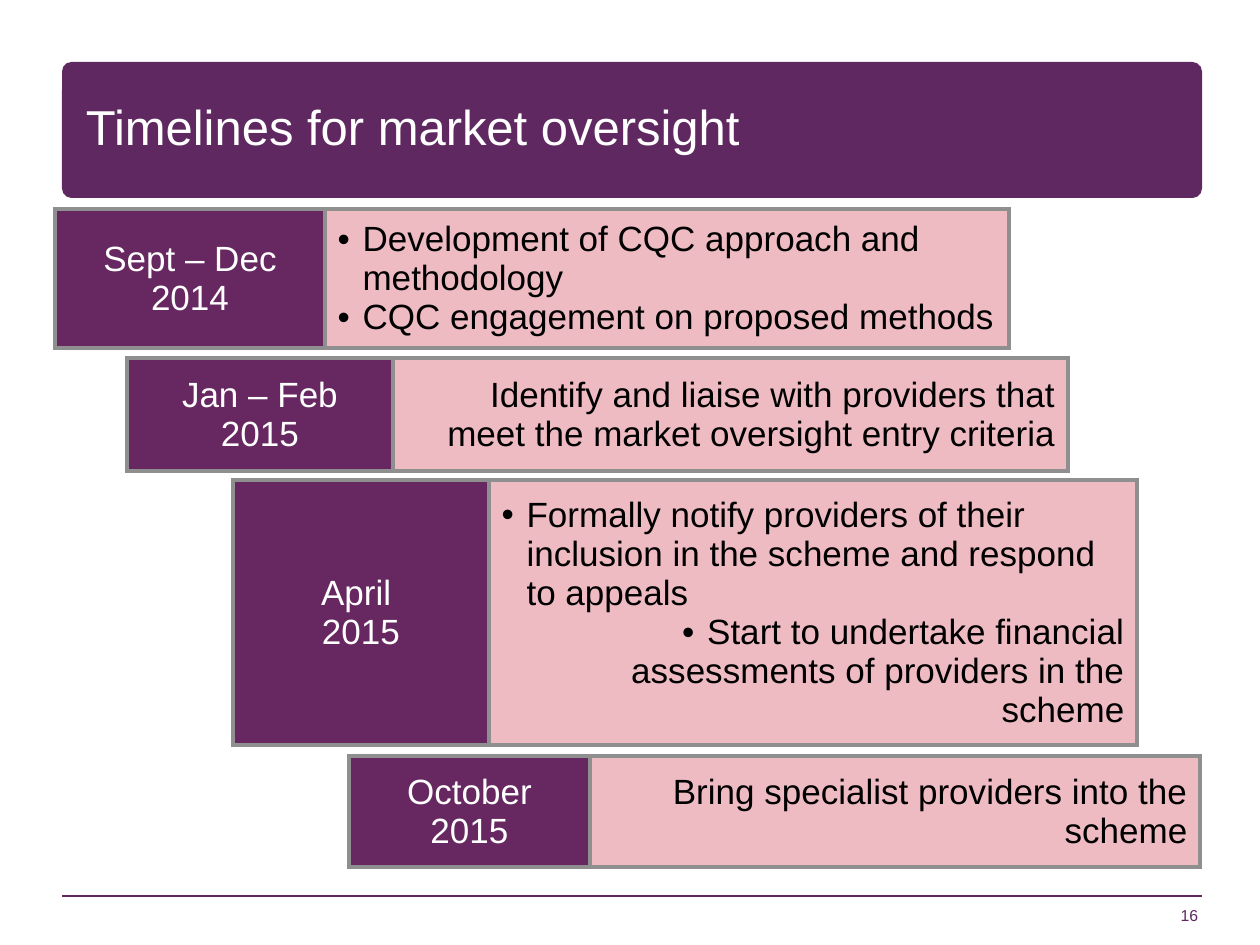
from lxml import etree
from pptx import Presentation
from pptx.dml.color import RGBColor
from pptx.enum.shapes import MSO_CONNECTOR, MSO_SHAPE
from pptx.enum.text import MSO_ANCHOR, PP_ALIGN
from pptx.oxml.ns import qn
from pptx.util import Pt

LEFT, CENTER, RIGHT = PP_ALIGN.LEFT, PP_ALIGN.CENTER, PP_ALIGN.RIGHT
MIDDLE, BOTTOM = MSO_ANCHOR.MIDDLE, MSO_ANCHOR.BOTTOM
ROUNDED = MSO_SHAPE.ROUNDED_RECTANGLE
STRAIGHT = MSO_CONNECTOR.STRAIGHT

EMU_PER_PX = 914400 / 126
COLORS = {
    "banner": "5F2861",
    "period": "672861",
    "detail": "EFBBC3",
    "border": "8F8F8F",
    "light": "FFFFFF",
    "dark": "000000",
}


def px(length):
    return round(length * EMU_PER_PX)


def rgb(name):
    return RGBColor.from_string(COLORS[name])


def apply_format(target, values):
    for name, value in values.items():
        setattr(target, name, value)


class TimelineSlide:
    font_name = "Arial"
    border_width = Pt(3)
    bullet_indent = 25

    def __init__(self, presentation):
        self.slide = presentation.slides.add_slide(presentation.slide_layouts[6])

    def fill_frame(self, frame, paragraphs, size, color, **paragraph_format):
        for index, (text, align, bullet) in enumerate(paragraphs):
            paragraph = frame.paragraphs[0] if index == 0 else frame.add_paragraph()
            if bullet:
                self.add_bullet(paragraph)
            apply_format(paragraph, {"alignment": align, **paragraph_format})
            run = paragraph.add_run()
            run.text = text
            apply_format(run.font, {"name": self.font_name, "size": Pt(size)})
            run.font.color.rgb = rgb(color)

    def add_bullet(self, paragraph):
        properties = paragraph._p.get_or_add_pPr()
        properties.set("marL", str(px(self.bullet_indent)))
        properties.set("indent", str(-px(self.bullet_indent)))
        etree.SubElement(properties, qn("a:buFont"), typeface=self.font_name)
        etree.SubElement(properties, qn("a:buChar"), char="•")

    def banner(self, left, top, width, height, rounding):
        shape = self.slide.shapes.add_shape(ROUNDED, *map(px, (left, top, width, height)))
        shape.adjustments[0] = rounding
        shape.shadow.inherit = False
        shape.fill.solid()
        shape.fill.fore_color.rgb = rgb("banner")
        shape.line.fill.background()

    def rule(self, left, right, top):
        line = self.slide.shapes.add_connector(STRAIGHT, *map(px, (left, top, right, top)))
        line.line.color.rgb = rgb("banner")
        line.line.width = Pt(1)
        etree.SubElement(line._element.spPr, qn("a:effectLst"))

    def text(self, box, content, size, color, align, anchor, **paragraph_format):
        frame = self.slide.shapes.add_textbox(*map(px, box)).text_frame
        apply_format(frame, {
            "word_wrap": True, "vertical_anchor": anchor,
            "margin_left": 0, "margin_right": 0, "margin_top": 0, "margin_bottom": 0,
        })
        self.fill_frame(frame, [(content, align, False)], size, color, **paragraph_format)

    def border(self, cell):
        properties = cell._tc.get_or_add_tcPr()
        for side in ("lnL", "lnR", "lnT", "lnB"):
            line = etree.SubElement(properties, qn(f"a:{side}"), w=str(self.border_width))
            fill = etree.SubElement(line, qn("a:solidFill"))
            etree.SubElement(fill, qn("a:srgbClr"), val=COLORS["border"])

    def stage(self, left, top, height, widths, period, details):
        box = map(px, (left, top, sum(widths), height))
        table = self.slide.shapes.add_table(1, 2, *box).table
        apply_format(table, {"first_row": False, "horz_banding": False})
        period_lines = [(line, CENTER, False) for line in period]
        contents = ((period_lines, "period", "light"), (details, "detail", "dark"))
        for column, (paragraphs, fill, color) in enumerate(contents):
            table.columns[column].width = px(widths[column])
            cell = table.cell(0, column)
            self.border(cell)
            cell.fill.solid()
            cell.fill.fore_color.rgb = rgb(fill)
            cell.vertical_anchor = MIDDLE
            self.fill_frame(cell.text_frame, paragraphs, 20, color)


STAGES = [
    (55, 209, 139, (270, 684), ["Sept – Dec 2014"], [
        ("Development of CQC approach and methodology", LEFT, True),
        ("CQC engagement on proposed methods", LEFT, True),
    ]),
    (127, 358, 113, (266, 675), ["Jan – Feb 2015"], [
        ("Identify and liaise with providers that meet the market oversight entry criteria",
         RIGHT, False),
    ]),
    (233, 480, 265, (256, 648), ["April ", "2015"], [
        ("Formally notify providers of their inclusion in the scheme and respond to appeals",
         LEFT, True),
        ("Start to undertake financial assessments of providers in the scheme", RIGHT, True),
    ]),
    (349, 756, 111, (241, 610), ["October", "2015"], [
        ("Bring specialist providers into the scheme", RIGHT, False),
    ]),
]


def main():
    presentation = Presentation()
    apply_format(presentation, {"slide_width": px(1260), "slide_height": px(945)})
    timeline = TimelineSlide(presentation)
    timeline.banner(62, 62, 1140, 136, 0.07)
    timeline.rule(62, 1202, 896)
    timeline.text((936, 862, 262, 63), "16", 9, "banner", RIGHT, BOTTOM)
    timeline.text((86, 68, 769, 125), "Timelines for market oversight", 28, "light",
                  LEFT, MIDDLE, line_spacing=0.85)
    for stage in STAGES:
        timeline.stage(*stage)
    presentation.save("out.pptx")


if __name__ == "__main__":
    main()
